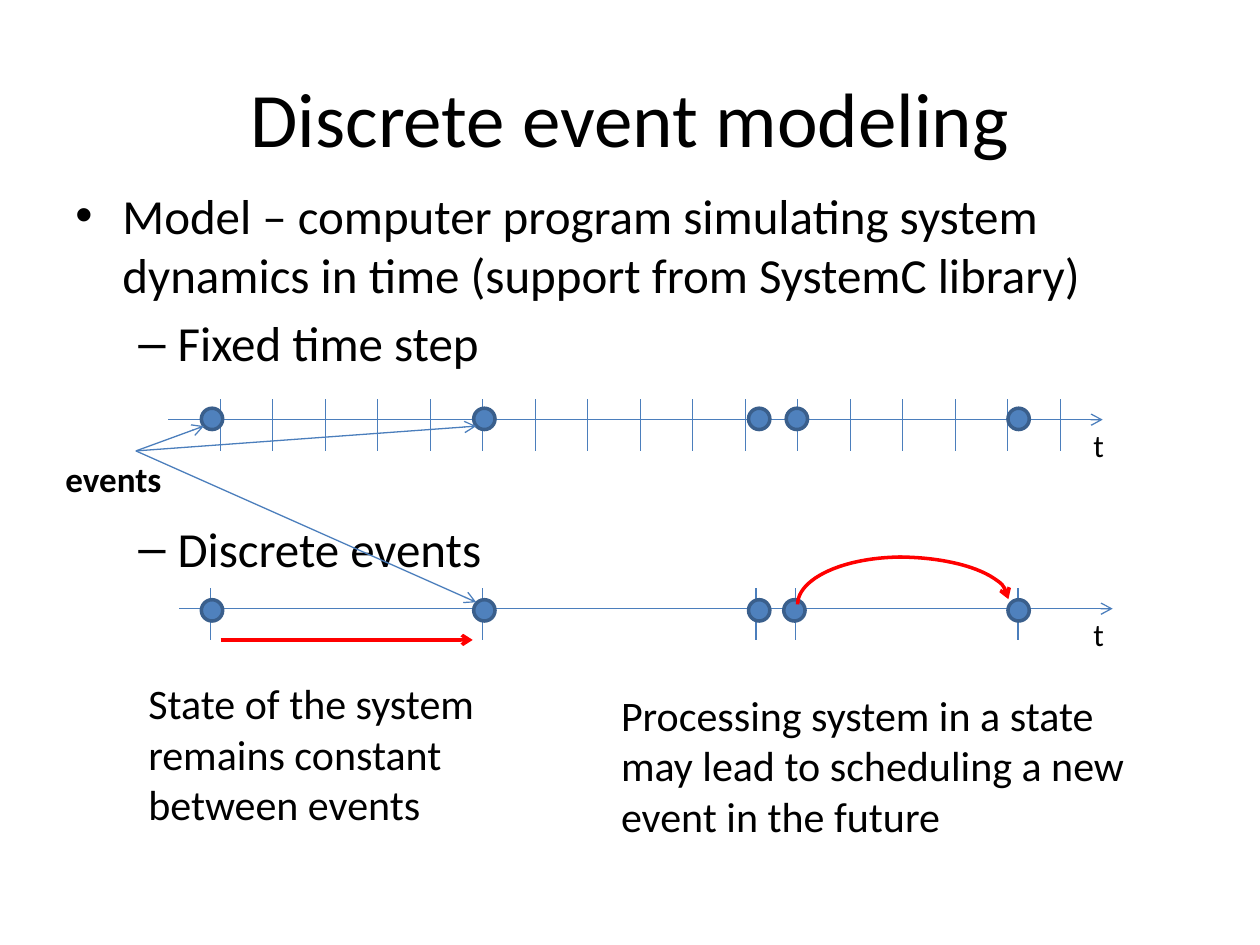
"""Build the slide comparing fixed-step and discrete event modeling."""
from dataclasses import dataclass
from typing import Any

from lxml import etree
from pptx import Presentation
from pptx import util as u
from pptx.dml.color import RGBColor
from pptx.enum import shapes, text
from pptx.oxml import ns

BLACK = RGBColor(0x00, 0x00, 0x00)
AXIS_BLUE = RGBColor(0x4B, 0x7E, 0xBC)
EVENT_BLUE = RGBColor(0x4F, 0x81, 0xBD)
EVENT_EDGE = RGBColor(0x3A, 0x5F, 0x8C)
RED = RGBColor(0xFF, 0x00, 0x00)
DOT_SIZE = 0.43
TICK_PITCH = 1.0583


@dataclass(frozen=True)
class Timeline:
    start: float
    end: float
    axis_y: float
    tick_top: float
    ticks: list[float]
    dot_top: float
    dots: list[float]


@dataclass(frozen=True)
class Label:
    wording: str
    left: float
    top: float
    width: float
    height: float
    size: int
    bold: bool = False


@dataclass(frozen=True)
class Bullet:
    wording: str
    mark: str
    margin: float
    hanging: float
    gap: float


@dataclass(frozen=True)
class Arc:
    left: float
    top: float
    width: float
    height: float
    flipped: bool
    arrow: bool


TIMELINES = [
    Timeline(3.39, 22.23, 8.46, 8.05, [4.44 + TICK_PITCH * i for i in range(17)],
             8.23, [4.06, 9.55, 15.09, 15.85, 20.32]),
    Timeline(3.61, 22.43, 12.27, 11.86, [4.24, 9.73, 15.24, 16.03, 20.52],
             12.09, [4.06, 9.55, 15.09, 15.8, 20.32]),
]
LABELS = [
    Label("State of the system remains constant between events", 2.74, 13.54, 8.46, 3.33, 24),
    Label("Processing system in a state may lead to scheduling a new event in the future",
          12.27, 13.77, 11.43, 3.33, 24),
    Label("t", 21.79, 8.46, 0.64, 1.07, 18),
    Label("t", 21.79, 12.27, 0.64, 1.07, 18),
    Label("events", 1.07, 9.09, 3.38, 1.12, 20, True),
]
BULLETS = [
    Bullet("Model – computer program simulating system dynamics in time "
           "(support from SystemC library)", "•", 0.95, 0.95, 0),
    Bullet("Fixed time step", "–", 2.06, 0.79, 5.6),
    Bullet("Discrete events", "–", 2.06, 0.79, 84),
]
ARCS = [Arc(16.08, 11.23, 4.22, 1.91, True, False), Arc(15.88, 11.23, 4.45, 1.7, False, True)]
POINTER_START = (2.74, 9.09)
POINTER_ENDS = [(4.11, 8.59), (9.6, 8.59), (9.6, 12.14)]


def format_font(font: Any, size: int, bold: bool = False) -> None:
    font.color.rgb = BLACK
    for attribute, value in {"name": "Calibri", "size": u.Pt(size), "bold": bold}.items():
        setattr(font, attribute, value)


def add_arrowhead(stroke: Any) -> None:
    etree.SubElement(stroke.get_or_add_ln(), ns.qn("a:tailEnd"), type="arrow")


def draw_line(slide: Any, start: tuple[float, float], end: tuple[float, float],
              color: RGBColor = AXIS_BLUE, width: float = 0.75, arrow: bool = False) -> None:
    ends = [u.Cm(value) for value in (*start, *end)]
    line = slide.shapes.add_connector(shapes.MSO_CONNECTOR.STRAIGHT, *ends)
    line.line.color.rgb = color
    line.line.width = u.Pt(width)
    if arrow:
        add_arrowhead(line)
    etree.SubElement(line.element.spPr, ns.qn("a:effectLst"))


def draw_timeline(slide: Any, timeline: Timeline) -> None:
    for x in timeline.ticks:
        draw_line(slide, (x, timeline.tick_top), (x, timeline.tick_top + 1.04))
    draw_line(slide, (timeline.start, timeline.axis_y), (timeline.end, timeline.axis_y), arrow=True)
    for left in timeline.dots:
        dot = slide.shapes.add_shape(shapes.MSO_SHAPE.OVAL, u.Cm(left), u.Cm(timeline.dot_top),
                                     u.Cm(DOT_SIZE), u.Cm(DOT_SIZE))
        dot.shadow.inherit = False
        dot.fill.solid()
        dot.fill.fore_color.rgb = EVENT_BLUE
        dot.line.color.rgb = EVENT_EDGE
        dot.line.width = u.Pt(2)


def draw_arc(slide: Any, arc: Arc) -> None:
    curve = slide.shapes.add_shape(shapes.MSO_SHAPE.ARC, u.Cm(arc.left), u.Cm(arc.top),
                                   u.Cm(arc.width), u.Cm(arc.height))
    curve.shadow.inherit = False
    curve.fill.background()
    curve.line.color.rgb = RED
    curve.line.width = u.Pt(2)
    if arc.flipped:
        curve.element.spPr.xfrm.set("flipH", "1")
    if arc.arrow:
        add_arrowhead(curve)


def add_label(slide: Any, label: Label) -> None:
    box = slide.shapes.add_textbox(u.Cm(label.left), u.Cm(label.top),
                                   u.Cm(label.width), u.Cm(label.height))
    box.text_frame.word_wrap = True
    box.text_frame.text = label.wording
    format_font(box.text_frame.paragraphs[0].runs[0].font, label.size, label.bold)


def add_outline(slide: Any) -> None:
    frame = slide.shapes.add_textbox(u.Cm(1.27), u.Cm(3.61), u.Cm(22.86), u.Cm(12.57)).text_frame
    frame.word_wrap = True
    for index, bullet in enumerate(BULLETS):
        paragraph = frame.add_paragraph() if index else frame.paragraphs[0]
        run = paragraph.add_run()
        run.text = bullet.wording
        format_font(run.font, 28)
        paragraph.level = min(index, 1)
        paragraph.space_before = u.Pt(bullet.gap)
        properties = paragraph._p.get_or_add_pPr()
        properties.set("marL", str(u.Cm(bullet.margin)))
        properties.set("indent", str(-u.Cm(bullet.hanging)))
        etree.SubElement(properties, ns.qn("a:buFont"), typeface="Arial")
        etree.SubElement(properties, ns.qn("a:buChar"), char=bullet.mark)


def set_title(slide: Any) -> None:
    title = slide.shapes.title
    placement = {"left": 1.27, "top": 0.76, "width": 22.86, "height": 3.18}
    for attribute, value in placement.items():
        setattr(title, attribute, u.Cm(value))
    title.text_frame.text = "Discrete event modeling"
    title.text_frame.vertical_anchor = text.MSO_ANCHOR.MIDDLE
    heading = title.text_frame.paragraphs[0]
    heading.alignment = text.PP_ALIGN.CENTER
    format_font(heading.runs[0].font, 44)


def main() -> None:
    deck = Presentation()
    deck.slide_width, deck.slide_height = u.Cm(25.4), u.Cm(19.05)
    slide = deck.slides.add_slide(deck.slide_layouts[5])
    set_title(slide)
    add_outline(slide)
    for timeline in TIMELINES:
        draw_timeline(slide, timeline)
    for label in LABELS:
        add_label(slide, label)
    draw_line(slide, (4.45, 12.9), (9.53, 12.9), RED, 2, arrow=True)
    for arc in ARCS:
        draw_arc(slide, arc)
    for end in POINTER_ENDS:
        draw_line(slide, POINTER_START, end, arrow=True)
    deck.save("out.pptx")


if __name__ == "__main__":
    main()
